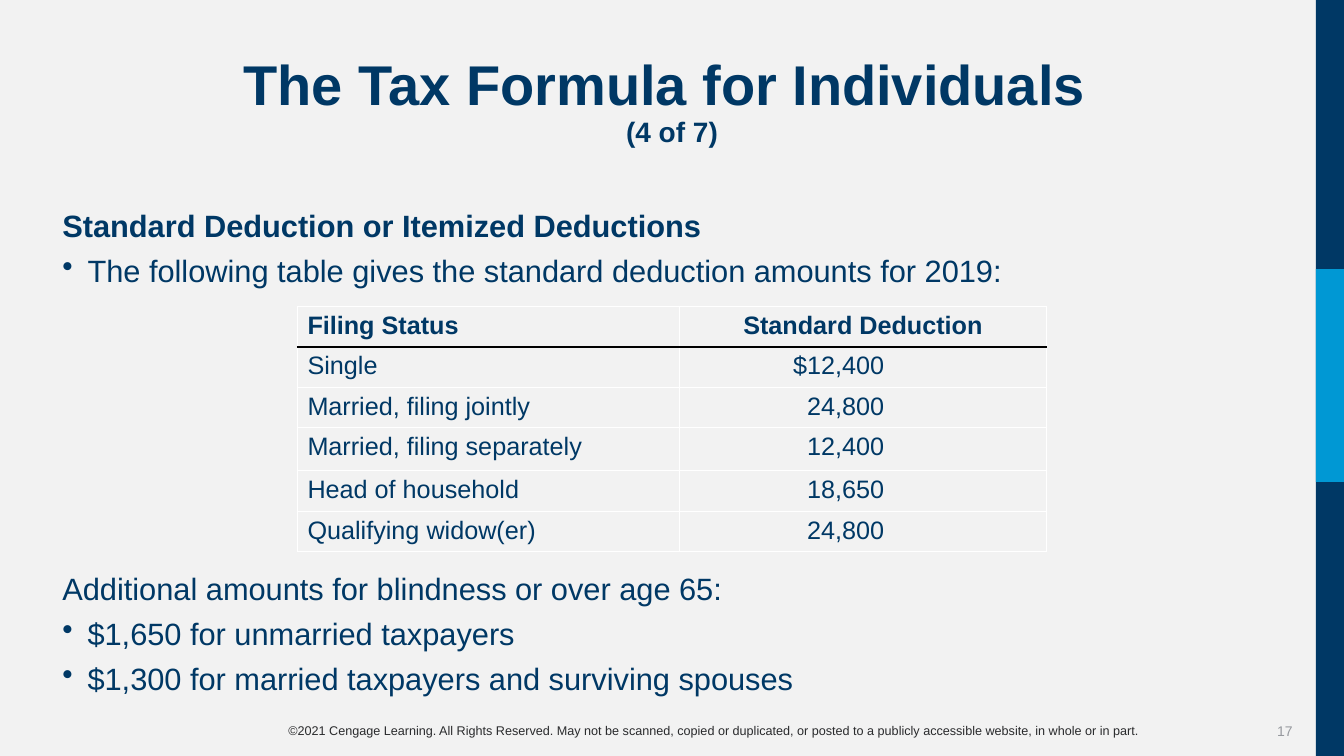
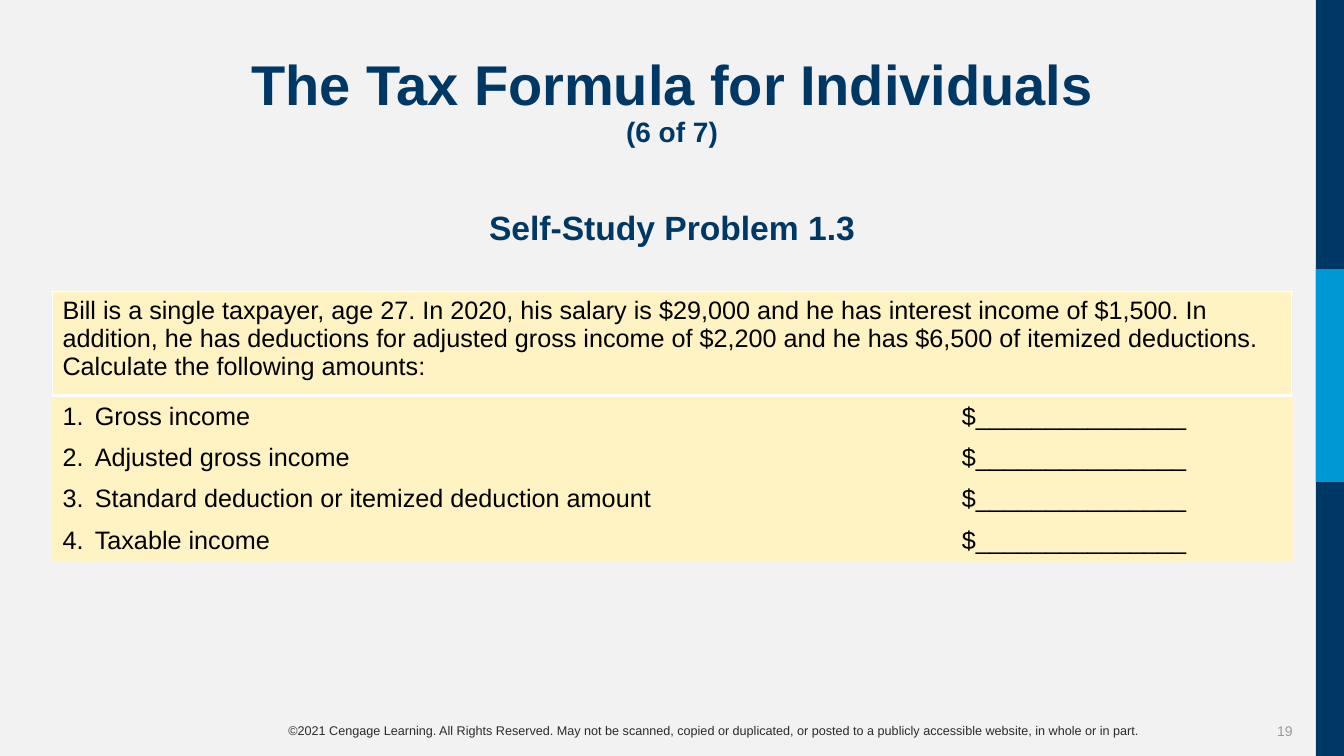
from lxml.etree import SubElement
from pptx import Presentation
from pptx.dml.color import RGBColor
from pptx.enum.shapes import MSO_SHAPE as Shape
from pptx.enum.text import MSO_ANCHOR as Anchor, PP_ALIGN as Align
from pptx.oxml.ns import qn
from pptx.util import Inches, Pt

# Shared look
WIDTH, HEIGHT = 13.33, 7.5
NAVY, BLUE, CREAM = "003865", "0098D4", "FFF3C4"
WHITE, BLACK, PAPER = "FFFFFF", "000000", "F2F2F2"
INK, GRAY = "2A2B2D", "96999E"
FONT = "Arial"
MARGIN = 0.52
CONTENT = WIDTH - 2 * MARGIN
BAND = 0.28
NO_STYLE = "{2D5ABB26-0587-4C30-8999-92F81FD0307C}"
COPYRIGHT = ("©2021 Cengage Learning. All Rights Reserved. May not be scanned, copied or "
             "duplicated, or posted to a publicly accessible website, in whole or in part.")

# Content
DEDUCTION_INTRO = [
    # text, bold, bulleted
    ("Standard Deduction or Itemized Deductions", True, False),
    ("The following table gives the standard deduction amounts for 2019:", False, True),
]
DEDUCTION_HEADS = ("Filing Status", "Standard Deduction")
DEDUCTIONS = [
    ("Single", "$12,400"),
    ("Married, filing jointly", "24,800"),
    ("Married, filing separately", "12,400"),
    ("Head of household", "18,650"),
    ("Qualifying widow(er)", "24,800"),
]
ADDITIONAL = [
    ("Additional amounts for blindness or over age 65:", False, False),
    ("$1,650 for unmarried taxpayers", False, True),
    ("$1,300 for married taxpayers and surviving spouses", False, True),
]
PROBLEM_TITLE = "Self-Study Problem 1.3"
PROBLEM = ("Bill is a single taxpayer, age 27. In 2020, his salary is $29,000 and he has "
           "interest income of $1,500. In addition, he has deductions for adjusted gross "
           "income of $2,200 and he has $6,500 of itemized deductions. "
           "Calculate the following amounts:")
QUESTIONS = ["Gross income", "Adjusted gross income",
             "Standard deduction or itemized deduction amount", "Taxable income"]
ANSWER = "$" + "_" * 15


# Text
def rgb(color):
    return RGBColor.from_string(color)


def add_span(para, text, size, color=NAVY, bold=False):
    span = para.add_run()
    span.text = text
    font = span.font
    font.name, font.size, font.bold = FONT, Pt(size), bold
    font.color.rgb = rgb(color)


def add_box(page, left, top, width, height):
    box = page.shapes.add_textbox(*map(Inches, (left, top, width, height)))
    box.text_frame.word_wrap = True
    return box.text_frame


def add_list_mark(para, indent, tag, **attributes):
    props = para._p.get_or_add_pPr()
    props.set("marL", str(Inches(indent)))
    props.set("indent", str(-Inches(indent)))
    SubElement(props, qn(tag), **attributes)


def add_body(page, top, height, lines):
    frame = add_box(page, MARGIN, top, CONTENT, height)
    for index, (text, bold, bulleted) in enumerate(lines):
        para = frame.add_paragraph() if index else frame.paragraphs[0]
        para.space_after = Pt(6)
        if bulleted:
            add_list_mark(para, 0.25, "a:buChar", char="•")
        add_span(para, text, 22, bold=bold)


# Tables
def add_table(page, left, top, columns, rows):
    frame = page.shapes.add_table(len(rows), len(columns), Inches(left), Inches(top),
                                  Inches(sum(columns)), Inches(sum(rows)))
    table = frame.table
    table.first_row = table.horz_banding = False
    table._tbl.tblPr.find(qn("a:tableStyleId")).text = NO_STYLE
    for column, width in zip(table.columns, columns):
        column.width = Inches(width)
    for row, height in zip(table.rows, rows):
        row.height = Inches(height)
    return table


def set_borders(cell, **edges):
    """Each edge (L, R, T, B) is a colour and a width in points."""
    props = cell._tc.get_or_add_tcPr()
    for side in "LRTB":
        color, width = edges.get(side, (WHITE, 1))
        line = SubElement(props, qn(f"a:ln{side}"), w=str(Pt(width)))
        fill = SubElement(line, qn("a:solidFill"))
        SubElement(fill, qn("a:srgbClr"), val=color)


def fill_cell(cell, color):
    cell.fill.solid()
    cell.fill.fore_color.rgb = rgb(color)


# Slide frame: bands, footer, page number and title
def add_page(deck, title, part, number):
    page = deck.slides.add_slide(deck.slide_layouts[5])
    for top, height, color in ((0, HEIGHT, NAVY), (2.67, 2.11, BLUE)):
        band = page.shapes.add_shape(Shape.RECTANGLE, Inches(WIDTH - BAND), Inches(top),
                                     Inches(BAND), Inches(height))
        band.shadow.inherit = False
        band.fill.solid()
        band.fill.fore_color.rgb = rgb(color)
        band.line.fill.background()

    footer = add_box(page, 1.82, 7.12, 10.51, 0.25).paragraphs[0]
    footer.alignment = Align.CENTER
    add_span(footer, COPYRIGHT, 9, INK)
    frame = add_box(page, 12.12, 7.05, 0.8, 0.4)
    frame.vertical_anchor = Anchor.MIDDLE
    frame.paragraphs[0].alignment = Align.RIGHT
    add_span(frame.paragraphs[0], str(number), 10, GRAY)

    heading = page.shapes.title
    heading.left, heading.top = Inches(MARGIN), Inches(MARGIN)
    heading.width, heading.height = Inches(CONTENT), Inches(1.33)
    heading.text_frame.vertical_anchor = Anchor.TOP
    para = heading.text_frame.paragraphs[0]
    para.alignment, para.line_spacing = Align.CENTER, 0.9
    add_span(para, title, 40, bold=True)
    para.add_line_break()
    SubElement(para._p[-1], qn("a:rPr"), sz="4000")
    add_span(para, part, 20, bold=True)
    return page


def build_deductions(deck):
    page = add_page(deck, "The Tax Formula for Individuals ", "(4 of 7)", 17)
    add_body(page, 2, 0.9, DEDUCTION_INTRO)
    rows = [0.38] * 3 + [0.43] + [0.38] * 2
    table = add_table(page, 2.95, 3.04, (3.79, 3.64), rows)
    rule = (BLACK, 1.5)
    for r, values in enumerate([DEDUCTION_HEADS] + DEDUCTIONS):
        edges = {0: {"B": rule}, 1: {"T": rule}}.get(r, {})
        for c, text in enumerate(values):
            cell = table.cell(r, c)
            set_borders(cell, **edges)
            para = cell.text_frame.paragraphs[0]
            if c and r:
                tabs = SubElement(para._p.get_or_add_pPr(), qn("a:tabLst"))
                SubElement(tabs, qn("a:tab"), pos=str(Inches(1.93)), algn="r")
                text = "\t" + text
            elif c:
                para.alignment = Align.CENTER
            add_span(para, text, 18, bold=r == 0)
    add_body(page, 5.6, 1.68, ADDITIONAL)


def build_problem(deck):
    page = add_page(deck, "The Tax Formula for Individuals", "(6 of 7)", 19)
    para = add_box(page, MARGIN, 2, CONTENT, 0.6).paragraphs[0]
    para.alignment = Align.CENTER
    add_span(para, PROBLEM_TITLE, 24, bold=True)

    cell = add_table(page, MARGIN, 2.89, [CONTENT], [1.04]).cell(0, 0)
    set_borders(cell, B=(WHITE, 3))
    fill_cell(cell, CREAM)
    add_span(cell.text_frame.paragraphs[0], PROBLEM, 18, BLACK)

    table = add_table(page, MARGIN, 3.94, (8.92, 3.38), [0.41] * len(QUESTIONS))
    for r, question in enumerate(QUESTIONS):
        for c, text in enumerate((question, ANSWER)):
            cell = table.cell(r, c)
            fill_cell(cell, CREAM)
            para = cell.text_frame.paragraphs[0]
            if c == 0:
                add_list_mark(para, 0.32, "a:buAutoNum", type="arabicPeriod",
                              startAt=str(r + 1))
            add_span(para, text, 18, BLACK)


def main():
    deck = Presentation()
    deck.slide_width, deck.slide_height = Inches(WIDTH), Inches(HEIGHT)
    background = deck.slide_master.background.fill
    background.solid()
    background.fore_color.rgb = rgb(PAPER)
    build_deductions(deck)
    build_problem(deck)
    deck.save("out.pptx")


if __name__ == "__main__":
    main()
